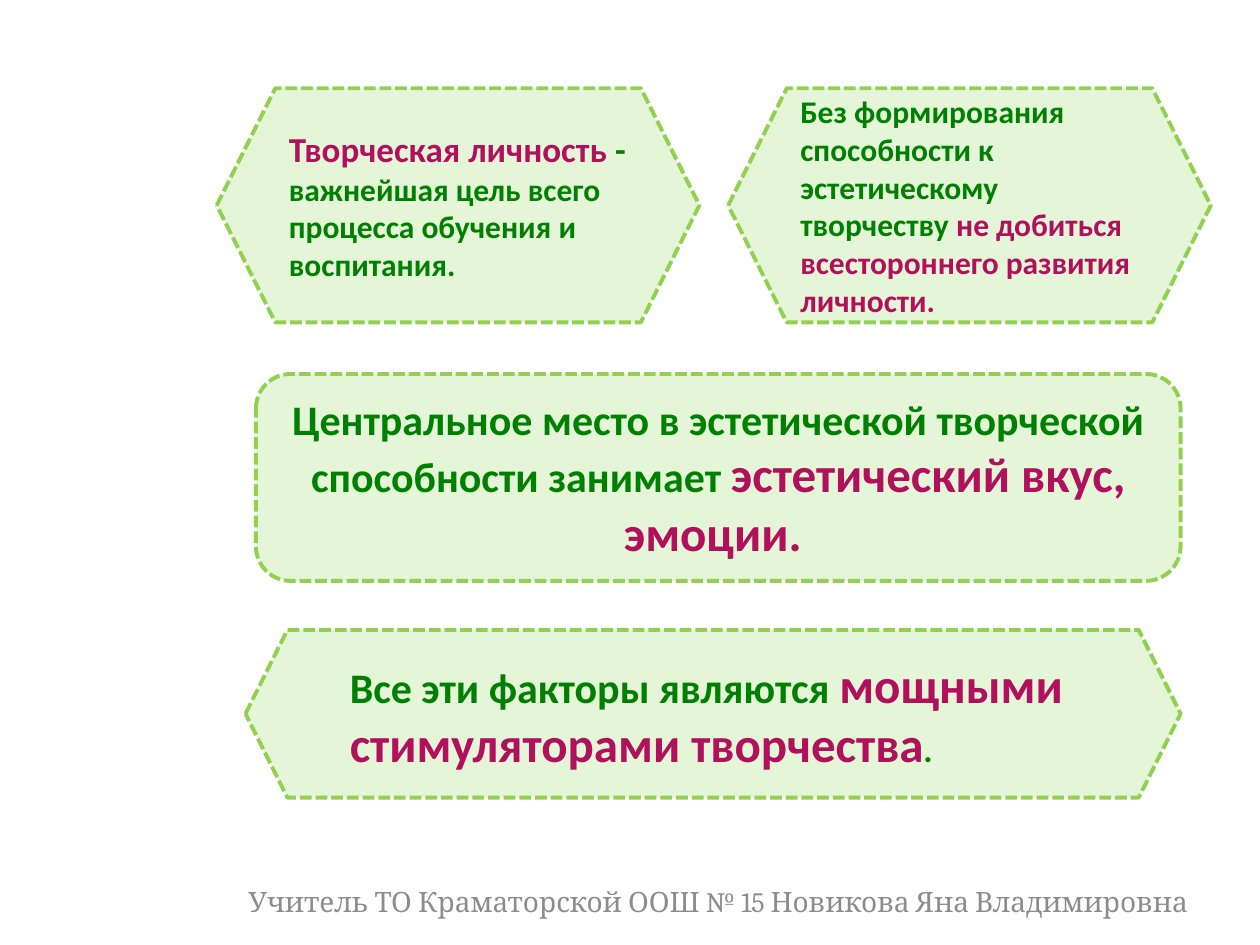
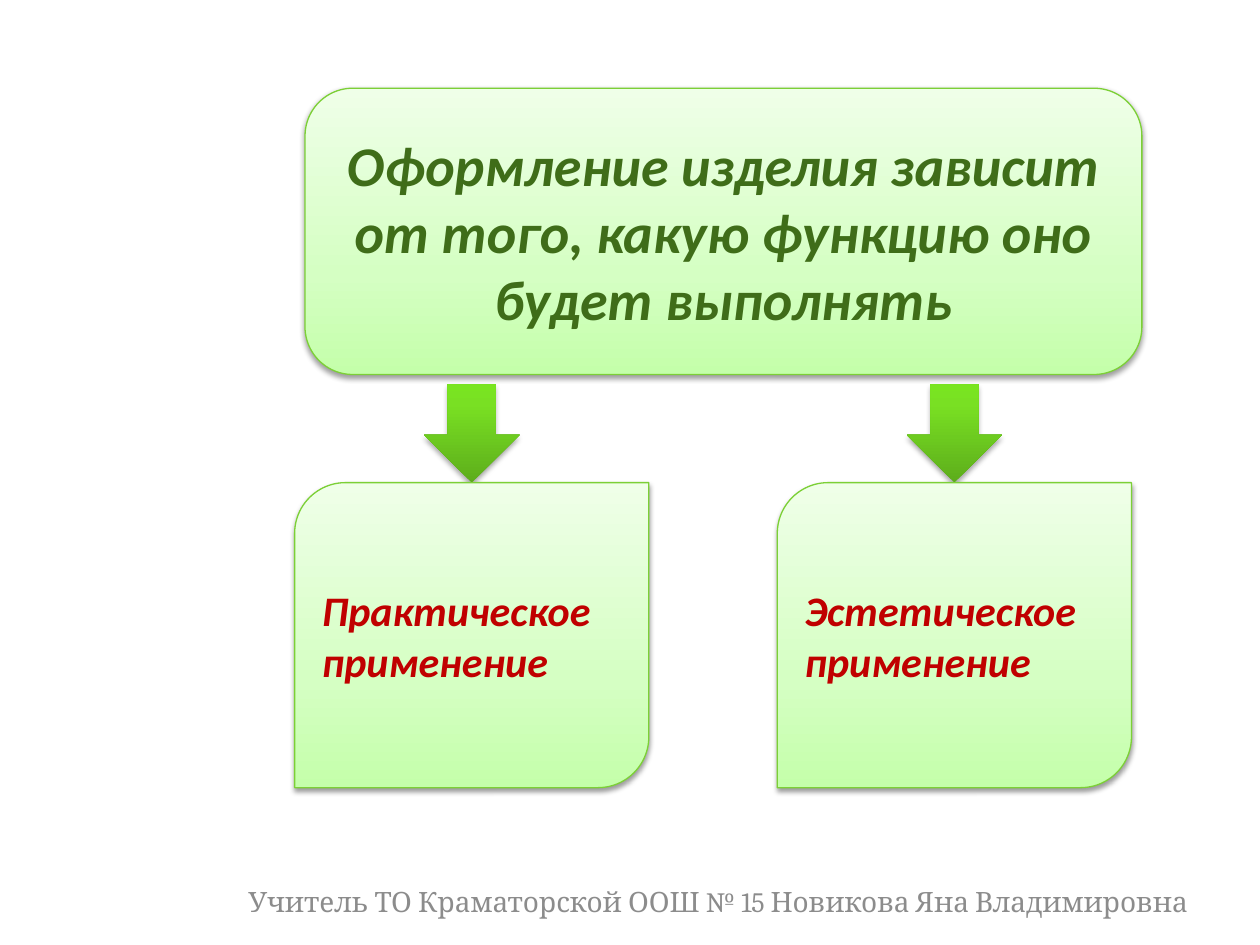
from lxml import etree
from pptx import Presentation
from pptx.dml.color import RGBColor
from pptx.enum.dml import MSO_LINE
from pptx.enum.shapes import MSO_SHAPE
from pptx.enum.text import MSO_ANCHOR, PP_ALIGN
from pptx.oxml.ns import qn
from pptx.util import Cm, Pt

HEXAGON = MSO_SHAPE.HEXAGON
ROUND_PANEL = MSO_SHAPE.FLOWCHART_ALTERNATE_PROCESS
ROUND_RECTANGLE = MSO_SHAPE.ROUNDED_RECTANGLE
DIAGONAL_CARD = MSO_SHAPE.ROUND_2_DIAG_RECTANGLE
DOWN_ARROW = MSO_SHAPE.DOWN_ARROW
DASH = MSO_LINE.SQUARE_DOT
MIDDLE = MSO_ANCHOR.MIDDLE
LEFT, CENTER = PP_ALIGN.LEFT, PP_ALIGN.CENTER

GREY = RGBColor(0x8C, 0x8C, 0x8C)
GREEN = RGBColor(0x00, 0x80, 0x00)
CRIMSON = RGBColor(0xB0, 0x10, 0x5C)
DARK_GREEN = RGBColor(0x3F, 0x6D, 0x19)
RED = RGBColor(0xC0, 0x00, 0x00)
PALE_GREEN = RGBColor(0xE5, 0xF6, 0xD8)
DASH_GREEN = RGBColor(0x92, 0xD0, 0x50)
EDGE_GREEN = RGBColor(0x7C, 0xD0, 0x36)
SOFT_GRADIENT = [
    (0, RGBColor(0xC4, 0xFF, 0xAA)),
    (35, RGBColor(0xD5, 0xFF, 0xC3)),
    (100, RGBColor(0xEF, 0xFF, 0xE8)),
]
BRIGHT_GRADIENT = [
    (0, RGBColor(0x5D, 0xAD, 0x1B)),
    (80, RGBColor(0x79, 0xE0, 0x23)),
    (100, RGBColor(0x79, 0xE5, 0x20)),
]

FOOTER = "Учитель ТО Краматорской ООШ № 15 Новикова Яна Владимировна"


def add_xml(parent, tag, **attributes):
    return etree.SubElement(parent, qn(tag), attributes)


class Builder:
    """Holds the deck's style and the slide being filled."""

    body_font = "Calibri"
    footer_font = "Cambria"

    def __init__(self):
        self.deck = Presentation()
        self.deck.slide_width, self.deck.slide_height = Cm(25.4), Cm(19.05)
        self.slide = None

    def new_slide(self):
        self.slide = self.deck.slides.add_slide(self.deck.slide_layouts[6])
        box = self.slide.shapes.add_textbox(Cm(4.37), Cm(17.65), Cm(20.24), Cm(1.02))
        self.set_text(box, [(FOOTER, 16, GREY)], CENTER, self.footer_font)

    def set_text(self, box, spans, align, font_name=body_font, bold=False, italic=False):
        """Fill a box with one paragraph of (text, size, colour) spans."""
        frame = box.text_frame
        frame.word_wrap = True
        frame.vertical_anchor = MIDDLE
        paragraph = frame.paragraphs[0]
        paragraph.alignment = align
        font = paragraph.font
        font.name, font.bold, font.italic = font_name, bold, italic
        for text, size, color in spans:
            span = paragraph.add_run()
            span.text = text
            span.font.size = Pt(size)
            span.font.color.rgb = color

    def shape(self, kind, left, top, width, height):
        shape = self.slide.shapes.add_shape(kind, Cm(left), Cm(top), Cm(width), Cm(height))
        shape.shadow.inherit = False
        return shape

    def dashed_panel(self, kind, place, spans, align=LEFT):
        panel = self.shape(kind, *place)
        panel.fill.solid()
        panel.fill.fore_color.rgb = PALE_GREEN
        panel.line.color.rgb = DASH_GREEN
        panel.line.width = Pt(2.25)
        panel.line.dash_style = DASH
        self.set_text(panel, spans, align, bold=True)

    def glossy_shape(self, kind, place, gradient, shadow_distance, shadow_alpha):
        """Add a shape with an upward gradient and a soft shadow below it."""
        shape = self.shape(kind, *place)
        shape.fill.gradient()
        shape.fill.gradient_angle = 90
        properties = shape._element.spPr
        stops = properties.find(".//" + qn("a:gsLst"))
        for stop in list(stops):
            stops.remove(stop)
        for position, color in gradient:
            stop = add_xml(stops, "a:gs", pos=str(position * 1000))
            add_xml(stop, "a:srgbClr", val=str(color))
        shadow = add_xml(
            properties.find(qn("a:effectLst")), "a:outerShdw", blurRad=str(Pt(3.1)),
            dist=str(Pt(shadow_distance)), dir="5400000", rotWithShape="0")
        shade = add_xml(shadow, "a:srgbClr", val="000000")
        add_xml(shade, "a:alpha", val=str(shadow_alpha * 1000))
        return shape

    def glossy_card(self, kind, place, text, size, color, align=LEFT):
        card = self.glossy_shape(kind, place, SOFT_GRADIENT, 1.6, 38)
        card.line.color.rgb = EDGE_GREEN
        card.line.width = Pt(0.75)
        self.set_text(card, [(text, size, color)], align, bold=True, italic=True)

    def glossy_arrow(self, place):
        arrow = self.glossy_shape(DOWN_ARROW, place, BRIGHT_GRADIENT, 1.8, 35)
        arrow.line.fill.background()


def creativity_slide(builder):
    builder.new_slide()
    statements = [
        [("Творческая личность ", 20, CRIMSON),
         ("- ", 20, GREEN),
         ("важнейшая цель всего процесса обучения и воспитания.", 18, GREEN)],
        [("Без формирования способности к эстетическому творчеству ", 18, GREEN),
         ("не добиться всестороннего развития личности.", 18, CRIMSON)],
    ]
    for column, spans in enumerate(statements):
        builder.dashed_panel(HEXAGON, (4.37 + column * 10.31, 1.78, 9.73, 4.72), spans)
    builder.dashed_panel(ROUND_PANEL, (5.16, 7.54, 18.64, 4.17), [
        ("Центральное место в эстетической творческой способности занимает ", 24, GREEN),
        ("эстетический вкус, эмоции. ", 28, CRIMSON),
    ], CENTER)
    builder.dashed_panel(HEXAGON, (4.95, 12.7, 18.85, 3.38), [
        ("Все эти факторы являются ", 24, GREEN),
        ("мощными стимуляторами творчества", 28, CRIMSON),
        (".", 20, GREEN),
    ])


def function_slide(builder):
    builder.new_slide()
    builder.glossy_card(
        ROUND_RECTANGLE, (6.15, 1.78, 16.87, 5.77),
        "Оформление изделия зависит от того, какую функцию оно будет выполнять",
        32, DARK_GREEN, CENTER)
    card_top, card_width = 9.73, 7.14
    arrow_width, arrow_height = 1.93, 1.98
    uses = ["Практическое применение", "Эстетическое применение"]
    lefts = [5.94 + column * 9.73 for column in range(len(uses))]
    for left in lefts:
        builder.glossy_arrow((left + (card_width - arrow_width) / 2,
                              card_top - arrow_height, arrow_width, arrow_height))
    for left, use in zip(lefts, uses):
        builder.glossy_card(DIAGONAL_CARD, (left, card_top, card_width, 6.15), use, 24, RED)


def main():
    builder = Builder()
    creativity_slide(builder)
    function_slide(builder)
    builder.deck.save("out.pptx")


if __name__ == "__main__":
    main()
